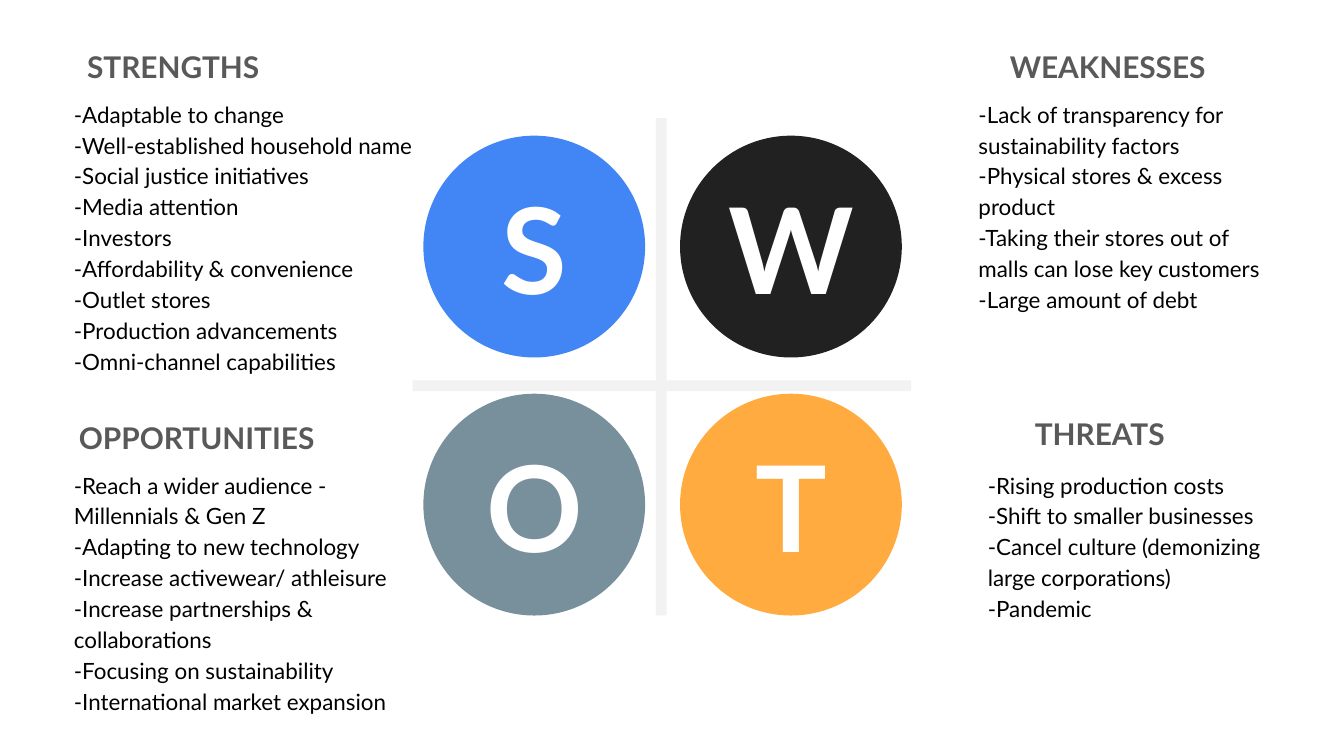
from pptx import Presentation
from pptx.dml.color import RGBColor
from pptx.enum.shapes import MSO_SHAPE as Shape
from pptx.enum.text import PP_ALIGN as Align
from pptx.util import Inches, Pt

COLORS = {
    "blue": "4285F4", "black": "212121", "slate": "78909C", "orange": "FFAB40",
    "bar": "F2F2F2", "heading": "595959", "body": "000000", "letter": "FFFFFF",
}
FORMATS = {
    "letter": {"size": Pt(64), "bold": True},
    "heading": {"size": Pt(16), "bold": True},
    "body": {"size": Pt(12), "bold": False},
}
MARGINS = {"margin_left": 0.04, "margin_top": 0.02, "margin_right": 0.04, "margin_bottom": 0.02}

deck = Presentation()
deck.slide_width = Inches(10)
deck.slide_height = Inches(10 * 9 / 16)
page = deck.slides.add_slide(deck.slide_layouts[6])


def add_filled(kind, place, color):
    shape = page.shapes.add_shape(kind, *map(Inches, place))
    shape.shadow.inherit = False
    shape.fill.solid()
    shape.fill.fore_color.rgb = RGBColor.from_string(COLORS[color])
    shape.line.fill.background()


def add_text(place, lines, style, align=Align.LEFT):
    """Add a text box with one paragraph per line; body text is indented."""
    box = page.shapes.add_textbox(*map(Inches, place))
    frame = box.text_frame
    frame.word_wrap = True
    for name, value in MARGINS.items():
        setattr(frame, name, Inches(value))
    for index, line in enumerate(lines):
        para = frame.add_paragraph() if index else frame.paragraphs[0]
        para.alignment = align
        if style == "body":
            para.line_spacing = 1.15
            properties = para._p.get_or_add_pPr()
            properties.set("marL", str(Inches(0.5)))
            properties.set("indent", "0")
        span = para.add_run()
        span.text = line
        span.font.name = "Lato"
        span.font.color.rgb = RGBColor.from_string(COLORS[style])
        for name, value in FORMATS[style].items():
            setattr(span.font, name, value)


# Circles with their letters, in a two by two grid
DIAMETER, LETTER_HEIGHT = 1.65, 1.11
circles = [("S", "blue", 0.58), ("W", "black", 1.04), ("O", "slate", 0.81), ("T", "orange", 0.63)]
for index, (letter, color, width) in enumerate(circles):
    row, column = divmod(index, 2)
    left, top = 3.15 + 1.91 * column, 1.01 + 1.92 * row
    add_filled(Shape.OVAL, (left, top, DIAMETER, DIAMETER), color)
    letter_place = (left + (DIAMETER - width) / 2, top + (DIAMETER - LETTER_HEIGHT) / 2,
                    width, LETTER_HEIGHT)
    add_text(letter_place, [letter], "letter", Align.CENTER)

# Cross between the circles
add_filled(Shape.RECTANGLE, (4.88, 0.88, 0.08, 3.7), "bar")
add_filled(Shape.RECTANGLE, (3.07, 2.83, 3.71, 0.08), "bar")

# Heading, its place and alignment, then the place and lines of its list
quadrants = [
    ("STRENGTHS", (0.12, 0.34, 1.85, 0.37), Align.RIGHT, (0.01, 0.7, 3.65, 2.23), [
        "-Adaptable to change",
        "-Well-established household name",
        "-Social justice initiatives",
        "-Media attention",
        "-Investors",
        "-Affordability & convenience",
        "-Outlet stores",
        "-Production advancements",
        "-Omni-channel capabilities",
    ]),
    ("WEAKNESSES", (7.29, 0.34, 1.72, 0.37), Align.RIGHT, (6.74, 0.7, 2.85, 1.11), [
        "-Lack of transparency for sustainability factors",
        "-Physical stores & excess product",
        "-Taking their stores out of malls can lose key customers",
        "-Large amount of debt",
    ]),
    ("OPPORTUNITIES", (0.34, 3.1, 2.04, 0.48), Align.RIGHT, (0.01, 3.46, 3.36, 1.11), [
        "-Reach a wider audience -",
        "Millennials & Gen Z",
        "-Adapting to new technology",
        "-Increase activewear/ athleisure",
        "-Increase partnerships & collaborations",
        "-Focusing on sustainability",
        "-International market expansion",
    ]),
    ("THREATS", (7.66, 3.07, 1.42, 0.54), Align.LEFT, (6.81, 3.46, 2.99, 1.11), [
        "-Rising production costs",
        "-Shift to smaller businesses",
        "-Cancel culture (demonizing large corporations)",
        "-Pandemic",
    ]),
]
for heading, heading_place, align, list_place, lines in quadrants:
    add_text(heading_place, [heading], "heading", align)
    add_text(list_place, lines, "body")

deck.save("out.pptx")
